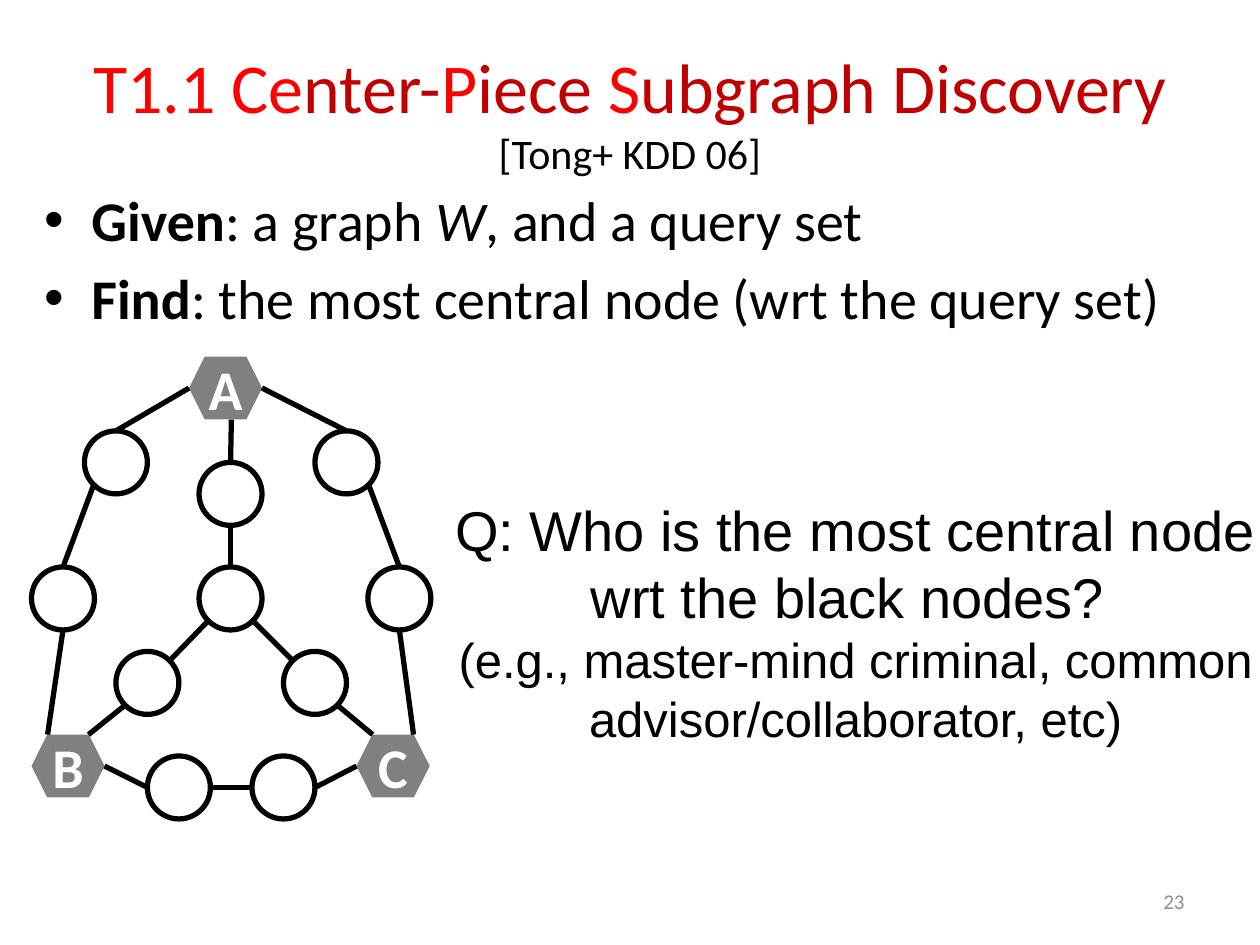
from typing import NamedTuple

from pptx import Presentation
from pptx.dml.color import RGBColor
from pptx.enum.shapes import MSO_CONNECTOR, MSO_SHAPE
from pptx.enum.text import MSO_ANCHOR, MSO_AUTO_SIZE, PP_ALIGN
from pptx.oxml.ns import qn
from pptx.util import Inches, Pt

BLACK, WHITE, GREY = "000000", "FFFFFF", "808080"
RED, DARK_RED = "FF0000", "C00000"
CIRCLE = 0.5
HEX_W, HEX_H = 0.58, 0.5
LINE_WIDTH = Pt(3)


class Node(NamedTuple):
    left: float
    top: float
    label: str = ""

    @property
    def size(self) -> tuple[float, float]:
        return (HEX_W, HEX_H) if self.label else (CIRCLE, CIRCLE)


class Edge(NamedTuple):
    start: str
    start_port: str
    end: str
    end_port: str


# Ports are fractions of a node's width and height
CIRCLE_PORTS = {
    "top": (0.5, 0), "bottom": (0.5, 1), "left": (0, 0.5), "right": (1, 0.5),
    "top left": (0.15, 0.15), "top right": (0.85, 0.15),
    "bottom left": (0.15, 0.85), "bottom right": (0.85, 0.85),
}
HEXAGON_PORTS = {
    "left": (0, 0.5), "right": (1, 0.5), "bottom": (0.58, 1),
    "top left": (0.22, 0), "top right": (0.78, 0),
}

NODES = {
    "B": Node(0.25, 5.83, "B"),
    "A": Node(1.5, 2.83, "A"),
    "C": Node(2.83, 5.83, "C"),
    "center": Node(1.58, 4.5),
    "center A": Node(1.58, 3.67),
    "center C": Node(2.25, 5.17),
    "center B": Node(0.92, 5.17),
    "outer left": Node(0.25, 4.5),
    "upper left": Node(0.67, 3.42),
    "base left": Node(1.17, 6),
    "base right": Node(2, 6),
    "outer right": Node(2.92, 4.5),
    "upper right": Node(2.5, 3.42),
}

EDGES = [
    Edge("center A", "bottom", "center", "top"),
    Edge("A", "bottom", "center A", "top"),
    Edge("center", "bottom right", "center C", "top left"),
    Edge("center C", "bottom right", "C", "top left"),
    Edge("center", "bottom left", "center B", "top right"),
    Edge("center B", "bottom left", "B", "top right"),
    Edge("base left", "left", "B", "right"),
    Edge("base right", "left", "base left", "right"),
    Edge("C", "left", "base right", "right"),
    Edge("outer left", "bottom", "B", "top left"),
    Edge("A", "left", "upper left", "top"),
    Edge("A", "right", "upper right", "top"),
    Edge("upper right", "bottom right", "outer right", "top"),
    Edge("outer right", "bottom", "C", "top right"),
    Edge("upper left", "bottom left", "outer left", "top"),
]


def rgb(value: str) -> RGBColor:
    return RGBColor.from_string(value)


def add_run(p, text: str, color: str = BLACK, **formats) -> None:
    r = p.add_run()
    r.text = text
    r.font.color.rgb = rgb(color)
    for name, value in formats.items():
        setattr(r.font, name, value)


def place(sp, left: float, top: float, width: float, height: float) -> None:
    sp.left, sp.top = Inches(left), Inches(top)
    sp.width, sp.height = Inches(width), Inches(height)


def add_text_box(shapes, left: float, top: float, width: float, height: float):
    tf = shapes.add_textbox(*map(Inches, (left, top, width, height))).text_frame
    tf.word_wrap = True
    return tf


def add_node(shapes, node: Node) -> None:
    kind = MSO_SHAPE.HEXAGON if node.label else MSO_SHAPE.OVAL
    sp = shapes.add_shape(kind, *map(Inches, (node.left, node.top, *node.size)))
    sp.shadow.inherit = False
    if not node.label:
        sp.fill.background()
        sp.line.color.rgb = rgb(BLACK)
        sp.line.width = LINE_WIDTH
        return
    sp.fill.solid()
    sp.fill.fore_color.rgb = rgb(GREY)
    sp.line.fill.background()
    tf = sp.text_frame
    for side in ("left", "top", "right", "bottom"):
        setattr(tf, f"margin_{side}", 0)
    tf.vertical_anchor = MSO_ANCHOR.MIDDLE
    tf.word_wrap = False
    p = tf.paragraphs[0]
    p.alignment = PP_ALIGN.CENTER
    add_run(p, node.label, WHITE, size=Pt(32), name="Calibri", bold=True)


def port_point(node: Node, port: str) -> tuple[int, int]:
    x, y = (HEXAGON_PORTS if node.label else CIRCLE_PORTS)[port]
    width, height = node.size
    return Inches(node.left + x * width), Inches(node.top + y * height)


def add_edge(shapes, edge: Edge) -> None:
    line = shapes.add_connector(
        MSO_CONNECTOR.STRAIGHT,
        *port_point(NODES[edge.start], edge.start_port),
        *port_point(NODES[edge.end], edge.end_port),
    )
    line.line.color.rgb = rgb(BLACK)
    line.line.width = LINE_WIDTH
    sp_pr = line._element.spPr
    sp_pr.append(sp_pr.makeelement(qn("a:effectLst"), {}))


def fill_title(title) -> None:
    place(title, 0.5, 0.25, 9, 1.25)
    tf = title.text_frame
    tf.auto_size = MSO_AUTO_SIZE.NONE
    tf.vertical_anchor = MSO_ANCHOR.MIDDLE
    p = tf.paragraphs[0]
    p.alignment = PP_ALIGN.CENTER
    for text, color in [("T1.1 Ce", RED), ("nter-", DARK_RED), ("P", RED),
                        ("iece ", DARK_RED), ("S", RED),
                        ("ubgraph Discovery ", DARK_RED)]:
        add_run(p, text, color, size=Pt(40), name="Calibri")
    add_run(p, "[Tong+ KDD 06]", size=Pt(24), name="Calibri")


def fill_body(body) -> None:
    place(body, 0.25, 1.42, 9.5, 1.42)
    tf = body.text_frame
    tf.auto_size = MSO_AUTO_SIZE.NONE
    font = {"size": Pt(32), "name": "Calibri"}
    given, find = tf.paragraphs[0], tf.add_paragraph()
    add_run(given, "Given", bold=True, **font)
    add_run(given, ": a graph ", **font)
    add_run(given, "W", italic=True, **font)
    add_run(given, ", and a query set", **font)
    add_run(find, "Find", bold=True, **font)
    add_run(find, ": the most central node (wrt the query set)", **font)


def main() -> None:
    prs = Presentation()
    prs.slide_width, prs.slide_height = Inches(10), Inches(7.5)
    slide = prs.slides.add_slide(prs.slide_layouts[1])
    fill_title(slide.shapes.title)
    fill_body(slide.placeholders[1])

    question = add_text_box(slide.shapes, 3.25, 3.88, 7.08, 2.12)
    example = question.add_paragraph()
    add_run(question.paragraphs[0],
            "Q: Who is the most central node wrt the black nodes? ",
            size=Pt(32), name="Arial")
    add_run(example,
            "(e.g., master-mind criminal, common advisor/collaborator, etc)",
            size=Pt(28), name="Arial")
    for p in question.paragraphs:
        p.alignment = PP_ALIGN.CENTER

    graph = slide.shapes.add_group_shape().shapes
    for node in NODES.values():
        add_node(graph, node)
    for edge in EDGES:
        add_edge(graph, edge)

    number = add_text_box(slide.shapes, 7.17, 6.95, 2.33, 0.4)
    number.vertical_anchor = MSO_ANCHOR.MIDDLE
    number.paragraphs[0].alignment = PP_ALIGN.RIGHT
    add_run(number.paragraphs[0], "23", "8C8C8C", size=Pt(12), name="Calibri")

    prs.save("out.pptx")


if __name__ == "__main__":
    main()
